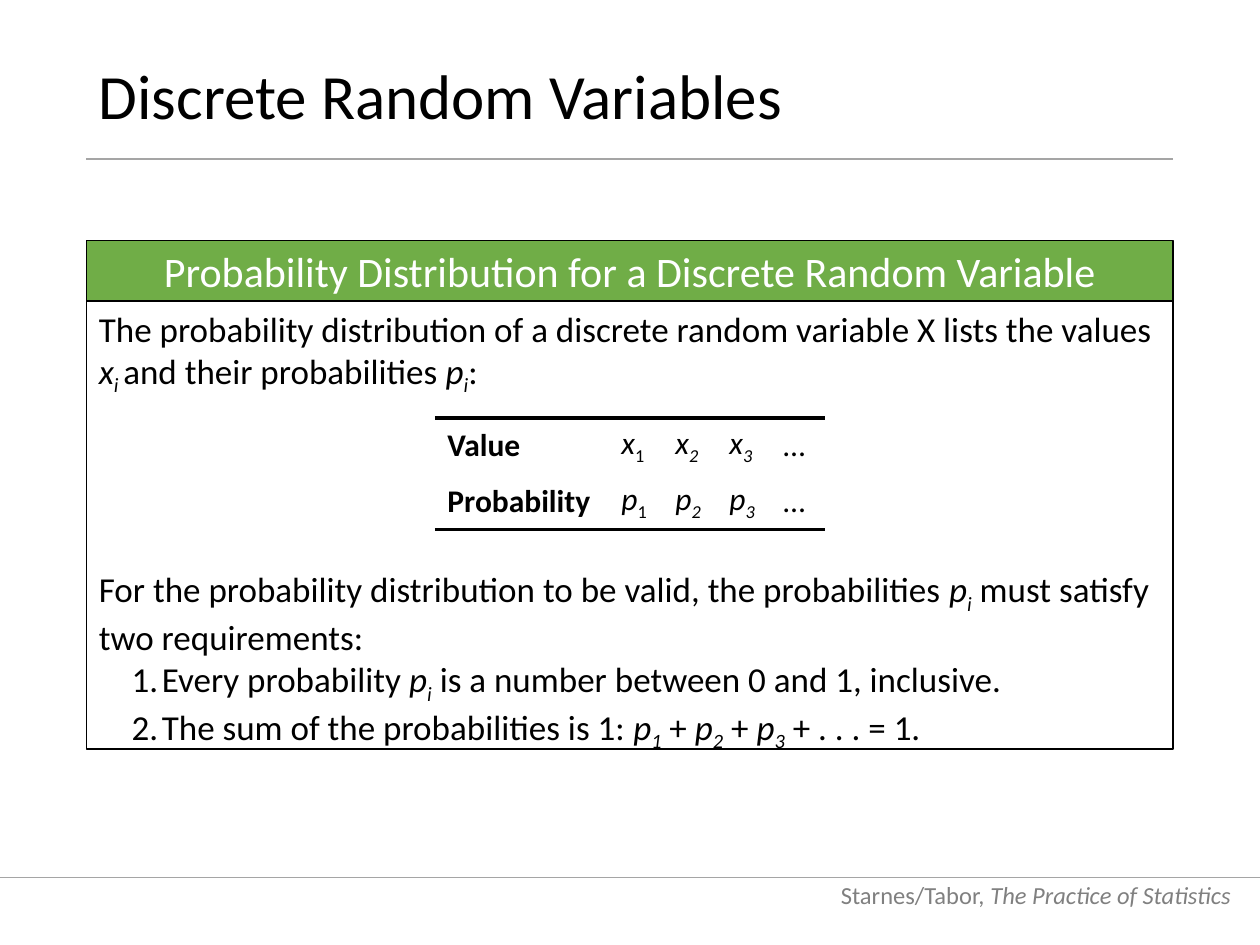
from dataclasses import dataclass

from lxml import etree
from pptx import Presentation
from pptx.dml.color import RGBColor
from pptx.enum.shapes import MSO_CONNECTOR, MSO_SHAPE
from pptx.enum.text import MSO_ANCHOR, PP_ALIGN
from pptx.oxml.ns import qn
from pptx.util import Pt


@dataclass(frozen=True)
class Theme:
    font: str = "Calibri"
    black: RGBColor = RGBColor(0x00, 0x00, 0x00)
    white: RGBColor = RGBColor(0xFF, 0xFF, 0xFF)
    green: RGBColor = RGBColor(0x70, 0xAD, 0x47)
    rule: RGBColor = RGBColor(0xA5, 0xA5, 0xA5)
    muted: RGBColor = RGBColor(0x80, 0x80, 0x80)
    title: int = 36
    heading: int = 24
    body: int = 20
    table: int = 18
    footer: int = 14


THEME = Theme()
PLAIN_TABLE_STYLE = "{2D5ABB26-0587-4C30-8999-92F81FD0307C}"


def write_runs(paragraph, runs, size, color=THEME.black):
    """Each run is (text, marks): b is bold, i is italic, s is subscript."""
    for text, marks in runs:
        run = paragraph.add_run()
        run.text = text
        font = run.font
        font.name, font.size = THEME.font, Pt(size)
        font.color.rgb = color
        font.bold, font.italic = "b" in marks, "i" in marks
        if "s" in marks:
            font._element.set("baseline", "-25000")


def symbol(letter, index, index_marks="is"):
    return [(letter, "i"), (index, index_marks)]


def add_rule(slide, left, top, width, color, weight):
    line = slide.shapes.add_connector(
        MSO_CONNECTOR.STRAIGHT, Pt(left), Pt(top), Pt(left + width), Pt(top))
    line.line.color.rgb = color
    line.line.width = Pt(weight)
    etree.SubElement(line._element.spPr, qn("a:effectLst"))


def add_text(slide, left, top, width, height, anchor):
    box = slide.shapes.add_textbox(Pt(left), Pt(top), Pt(width), Pt(height))
    box.text_frame.word_wrap = True
    box.text_frame.vertical_anchor = anchor
    return box.text_frame.paragraphs[0]


def add_panel(slide, left, top, width, height, weight, anchor, fill=None):
    panel = slide.shapes.add_shape(
        MSO_SHAPE.RECTANGLE, Pt(left), Pt(top), Pt(width), Pt(height))
    panel.shadow.inherit = False
    if fill is None:
        panel.fill.background()
    else:
        panel.fill.solid()
        panel.fill.fore_color.rgb = fill
    panel.line.color.rgb = THEME.black
    panel.line.width = Pt(weight)
    panel.text_frame.word_wrap = True
    panel.text_frame.vertical_anchor = anchor
    return panel.text_frame


def number_paragraph(paragraph):
    properties = paragraph._p.get_or_add_pPr()
    properties.set("marL", str(Pt(36)))
    properties.set("indent", str(-Pt(17.3)))
    etree.SubElement(properties, qn("a:buFont"), typeface="+mj-lt")
    etree.SubElement(properties, qn("a:buAutoNum"), type="arabicPeriod")
    tabs = etree.SubElement(properties, qn("a:tabLst"))
    etree.SubElement(tabs, qn("a:tab"), pos=str(Pt(36)), algn="l")


def add_cell_border(cell, edge):
    properties = cell._tc.get_or_add_tcPr()
    line = etree.Element(qn(f"a:{edge}"), w=str(Pt(2.25)))
    fill = etree.SubElement(line, qn("a:solidFill"))
    etree.SubElement(fill, qn("a:srgbClr"), val=str(THEME.black))
    properties.insert(0, line)


def add_title(slide, left, top, width, height):
    paragraph = add_text(slide, left, top, width, height, MSO_ANCHOR.MIDDLE)
    paragraph.line_spacing = 0.9
    write_runs(paragraph, [("Discrete Random Variables", "")], THEME.title)
    add_rule(slide, left, top + height + 6, width, THEME.rule, 1.5)


def add_footer(slide, left, top, width, height):
    add_rule(slide, left, top, width, THEME.rule, 0.5)
    text_width = 245
    paragraph = add_text(slide, left + width - text_width - 9.5, top - 7,
                         text_width, height, MSO_ANCHOR.BOTTOM)
    paragraph.alignment = PP_ALIGN.RIGHT
    write_runs(paragraph, [("Starnes/Tabor,", ""), (" The Practice of Statistics", "i")],
               THEME.footer, THEME.muted)


def add_definition(slide, left, top, width, height):
    # Heading band
    band = 34.5
    heading = add_panel(slide, left, top, width, band, 1, MSO_ANCHOR.MIDDLE, THEME.green)
    heading.paragraphs[0].alignment = PP_ALIGN.CENTER
    write_runs(heading.paragraphs[0],
               [("Probability Distribution for a Discrete Random Variable", "")],
               THEME.heading, THEME.white)

    # Explanation, with room for the table after the first paragraph
    body = add_panel(slide, left, top + band, width, height - band, 0.75, MSO_ANCHOR.TOP)
    introduction = [
        ("The probability distribution of a discrete random variable X lists the values ", ""),
        *symbol("x", "i "), ("and their probabilities ", ""), *symbol("p", "i"), (":", "")]
    condition = [
        ("For the probability distribution to be valid, the probabilities ", ""),
        *symbol("p", "i"), (" must satisfy two requirements:", "")]
    bounds = [("Every probability ", ""), *symbol("p", "i"),
              (" is a number between 0 and 1, inclusive.", "")]
    total = [("The sum of the probabilities is 1: ", ""), *symbol("p", "1"), (" + ", ""),
             *symbol("p", "2"), (" + ", ""), *symbol("p", "3"), (" + . . . = 1.", "")]
    for position, runs in enumerate([introduction, condition, bounds, total]):
        paragraph = body.paragraphs[0] if position == 0 else body.add_paragraph()
        paragraph.alignment = PP_ALIGN.LEFT
        if runs is condition:
            paragraph.space_before = Pt(97.6)
        if runs in (bounds, total):
            number_paragraph(paragraph)
        write_runs(paragraph, runs, THEME.body)

    # Distribution table, centred in the panel
    table_width = 222.8
    add_distribution(slide, left + (width - table_width) / 2, top + 101.5, table_width, 61.4)


def add_distribution(slide, left, top, width, height):
    rows = [("Value", "x"), ("Probability", "p")]
    label_width, value_columns = 99.4, 4
    frame = slide.shapes.add_table(
        len(rows), value_columns + 1, Pt(left), Pt(top), Pt(width), Pt(height))
    table = frame.table
    table.first_row = table.horz_banding = False
    table._tbl.tblPr.find(qn("a:tableStyleId")).text = PLAIN_TABLE_STYLE
    for number, column in enumerate(table.columns):
        column.width = Pt((width - label_width) / value_columns if number else label_width)
    for row, (label, letter) in enumerate(rows):
        contents = [[(label, "b")], symbol(letter, "1", "s"), symbol(letter, "2"),
                    symbol(letter, "3"), [("…", "")]]
        for column, runs in enumerate(contents):
            cell = table.cell(row, column)
            cell.fill.background()
            cell.vertical_anchor = MSO_ANCHOR.MIDDLE
            write_runs(cell.text_frame.paragraphs[0], runs, THEME.table)
            add_cell_border(cell, "lnB" if row else "lnT")


def main():
    presentation = Presentation()
    presentation.slide_width, presentation.slide_height = Pt(720), Pt(540)
    slide = presentation.slides.add_slide(presentation.slide_layouts[6])
    left, width = 49.4, 621
    add_footer(slide, 0, 501.2, 720, 29)
    add_title(slide, left, 28.8, width, 56)
    add_definition(slide, left, 137.4, width, 290.6)
    presentation.save("out.pptx")


if __name__ == "__main__":
    main()
